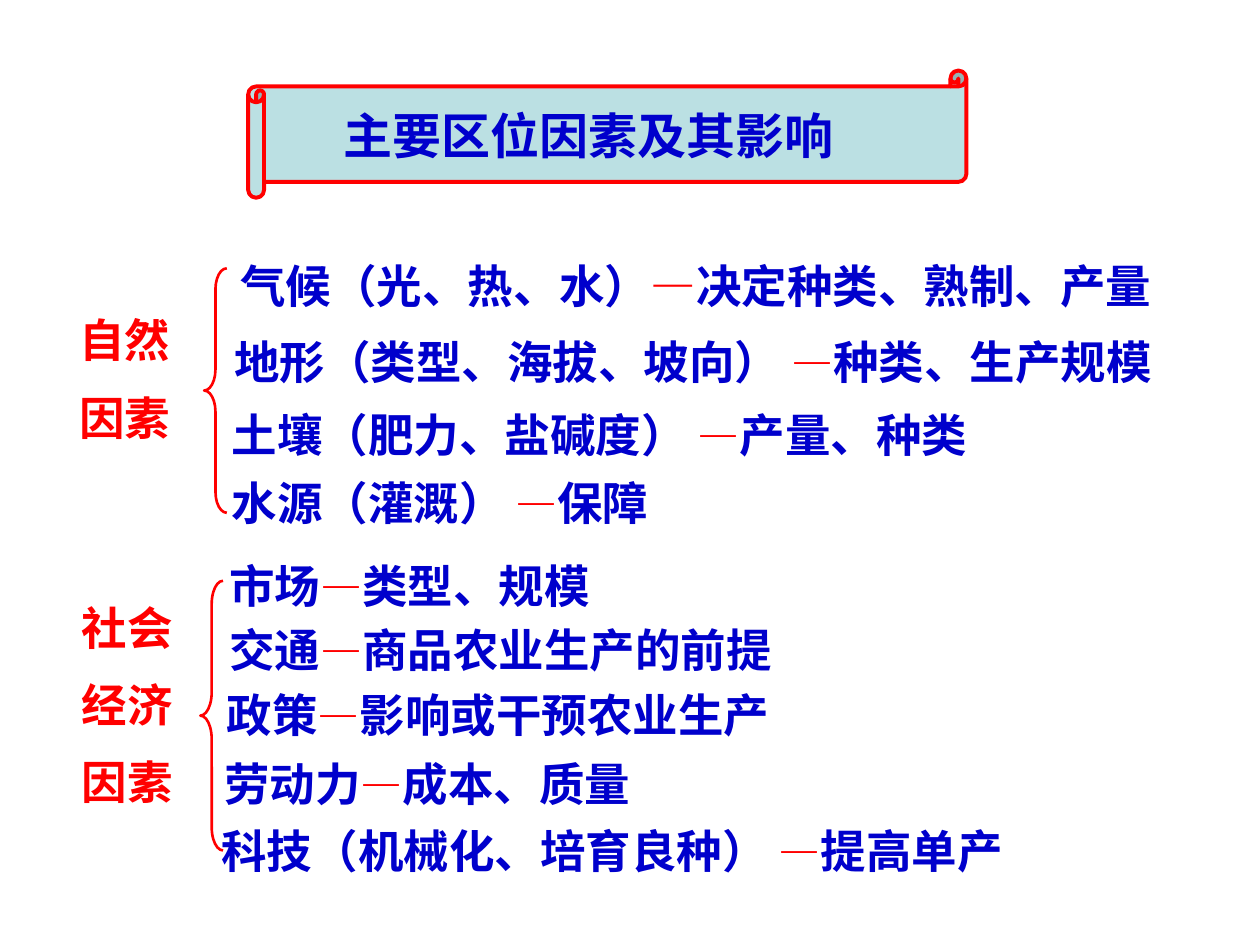
from pptx import Presentation
from pptx.dml.color import RGBColor
from pptx.enum.shapes import MSO_SHAPE as Shape
from pptx.enum.text import MSO_ANCHOR as Anchor, MSO_AUTO_SIZE as Auto, PP_ALIGN as Align
from pptx.util import Inches, Pt

RED, BLUE, PALE = "FF0000", "0000CC", "BBE0E3"
ROW = 0.53
TITLE = "主要区位因素及其影响"

# label: lines, box; brace: box, curve; rows: left, top, width, factor, effect, dash size
GROUPS = [
    dict(
        label=(["自然", "因素"], (0.53, 2.43, 0.98, 1.19)),
        brace=((1.62, 2.13, 0.18, 1.94), 0.92),
        rows=[
            (1.81, 2.0, 7.46, "气候（光、热、水）", "决定种类、熟制、产量", 26),
            (1.76, 2.6, 7.67, "地形（类型、海拔、坡向） ", "种类、生产规模", 24),
            (1.74, 3.18, 6.33, "土壤（肥力、盐碱度） ", "产量、种类", 24),
            (1.74, 3.72, 3.54, "水源（灌溉） ", "保障", 24),
        ],
    ),
    dict(
        label=(["社会", "经济", "因素"], (0.55, 4.71, 1.2, 1.84)),
        brace=((1.59, 4.61, 0.18, 2.14), 1.02),
        rows=[
            (1.72, 4.38, 3.07, "市场", "类型、规模", 24),
            (1.72, 4.89, 4.53, "交通", "商品农业生产的前提", 24),
            (1.7, 5.4, 4.53, "政策", "影响或干预农业生产", 24),
            (1.68, 5.95, 3.44, "劳动力", "成本、质量", 24),
            (1.66, 6.48, 7.87, "科技（机械化、培育良种） ", "提高单产", 24),
        ],
    ),
]


def color(text):
    return RGBColor.from_string(text)


def inches(box):
    return [Inches(v) for v in box]


def write(par, text, size=26, ink=BLUE):
    run = par.add_run()
    run.text = text
    font = run.font
    font.name, font.size, font.bold = "Arial", Pt(size), True
    font.color.rgb = color(ink)


def frame(shape):
    body = shape.text_frame
    body.word_wrap = True
    body.auto_size = Auto.NONE
    body.vertical_anchor = Anchor.TOP
    return body


def lines(home, box, pars):
    """Add a text box; each paragraph is a list of (text, size, ink)."""
    body = frame(home.add_textbox(*inches(box)))
    for i, runs in enumerate(pars):
        par = body.add_paragraph() if i else body.paragraphs[0]
        par.space_before = Pt(13)
        for run in runs:
            write(par, *run)


def outline(home, kind, box, curve, width, fill=None):
    shape = home.add_shape(kind, *inches(box))
    shape.shadow.inherit = False
    shape.adjustments[0] = curve
    shape.line.color.rgb = color(RED)
    shape.line.width = Pt(width)
    if fill:
        shape.fill.solid()
        shape.fill.fore_color.rgb = color(fill)
    else:
        shape.fill.background()


def main():
    deck = Presentation()
    deck.slide_width, deck.slide_height = Inches(10), Inches(7.5)
    shapes = deck.slides.add_slide(deck.slide_layouts[5]).shapes

    outline(shapes, Shape.HORIZONTAL_SCROLL, (1.97, 0.56, 5.7, 1.01), 0.125, 2.25, PALE)
    title = shapes.title
    title.left, title.top, title.width, title.height = inches((2.63, 0.79, 4.12, 0.57))
    par = frame(title).paragraphs[0]
    par.alignment = Align.LEFT
    write(par, TITLE, size=28)
    title.element.getparent().append(title.element)  # in front of the scroll

    for group in GROUPS:
        home = shapes.add_group_shape().shapes
        words, box = group["label"]
        lines(home, box, [[(word, 26, RED)] for word in words])
        for left, top, width, factor, effect, dash in group["rows"]:
            runs = [(factor, 26, BLUE), ("—", dash, RED), (effect, 26, BLUE)]
            lines(home, (left, top, width, ROW), [runs])
        outline(home, Shape.LEFT_BRACE, *group["brace"], 1.5)

    deck.save("out.pptx")


if __name__ == "__main__":
    main()
